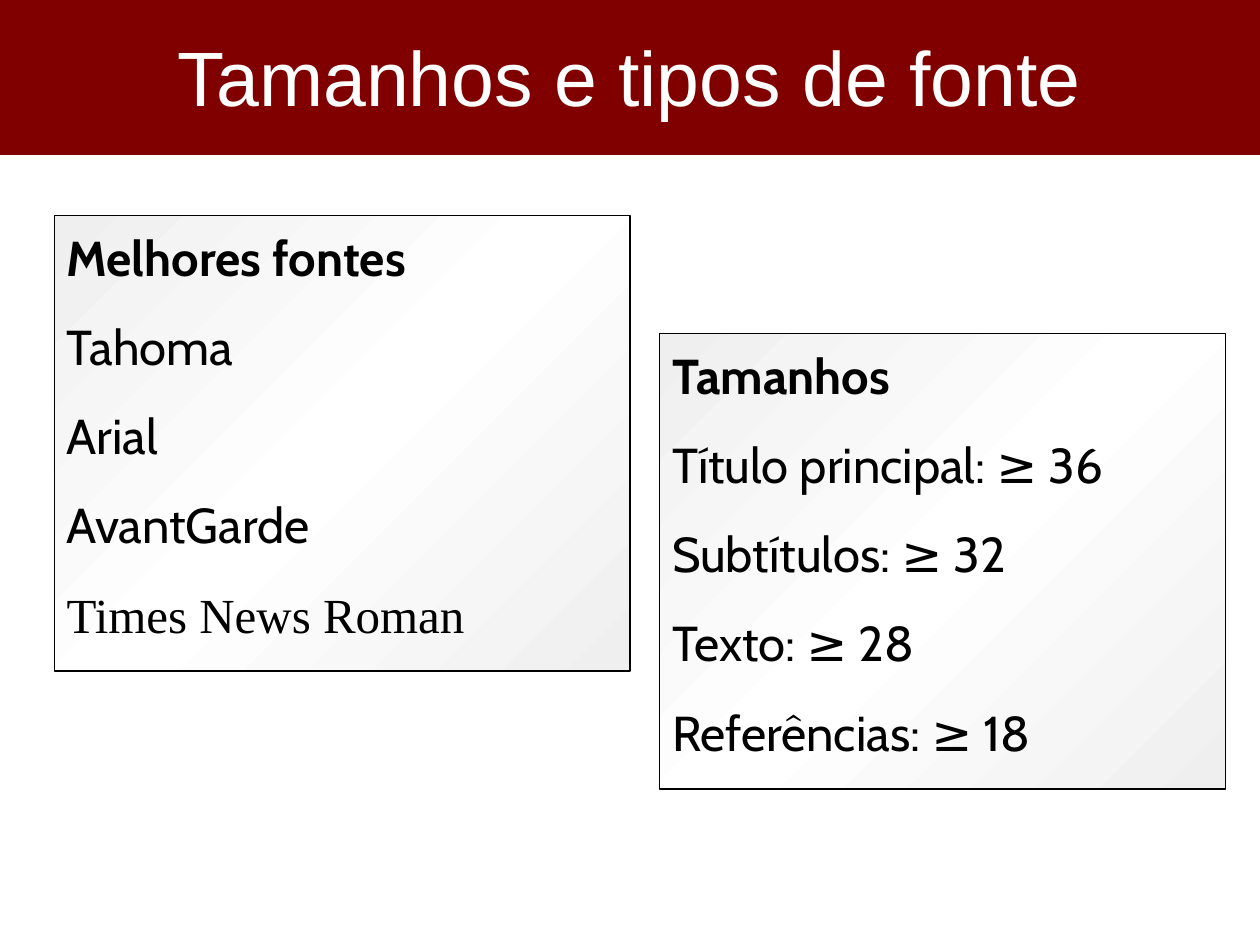
import copy

import pptx
import pptx.dml.color
import pptx.enum.shapes
import pptx.enum.text
import pptx.oxml.ns
import pptx.util
from lxml import etree

Pt = pptx.util.Pt
RGBColor = pptx.dml.color.RGBColor
MAROON = RGBColor(0x80, 0x00, 0x00)
WHITE = RGBColor(0xFF, 0xFF, 0xFF)
PALE_GREY = RGBColor(0xEF, 0xEF, 0xEF)
BLACK = RGBColor(0x00, 0x00, 0x00)

TITLE_FORMAT = {"name": "Arial", "size": Pt(44)}
ENTRY_FORMAT = {"name": "Cabin", "size": Pt(28), "bold": False}
HEADING_FORMAT = ENTRY_FORMAT | {"bold": True}
SERIF_FORMAT = ENTRY_FORMAT | {"name": "Times New Roman"}


def add_box(slide, box):
    """Add a shadowless rectangle with wrapped text in the given box."""
    rectangle = slide.shapes.add_shape(
        pptx.enum.shapes.MSO_SHAPE.RECTANGLE, *(Pt(length) for length in box))
    rectangle.shadow.inherit = False
    rectangle.text_frame.word_wrap = True
    return rectangle


def write(paragraph, text, font_format, color):
    """Put one formatted run into a paragraph."""
    run = paragraph.add_run()
    run.text = text
    run.font.color.rgb = color
    for attribute, value in font_format.items():
        setattr(run.font, attribute, value)


def fill_diagonally(panel):
    """Shade a panel grey, white, grey from top left to bottom right."""
    panel.fill.gradient()
    stop_list = panel._element.spPr.find(".//" + pptx.oxml.ns.qn("a:gsLst"))
    stop_list.append(copy.deepcopy(stop_list[-1]))
    shades = ((0, PALE_GREY), (0.5, WHITE), (1, PALE_GREY))
    for stop, (position, color) in zip(panel.fill.gradient_stops, shades):
        stop.position = position
        stop.color.rgb = color
    panel.fill.gradient_angle = 315


def space_before_half_line(paragraph):
    """Leave half a line above a paragraph."""
    properties = paragraph._p.get_or_add_pPr()
    spacing = etree.SubElement(properties, pptx.oxml.ns.qn("a:spcBef"))
    etree.SubElement(spacing, pptx.oxml.ns.qn("a:spcPct"), val="50000")


def add_title_band(slide, box, title):
    """Draw the coloured band with the centred slide title."""
    band = add_box(slide, box)
    band.fill.solid()
    band.fill.fore_color.rgb = MAROON
    band.line.fill.background()
    band.text_frame.vertical_anchor = pptx.enum.text.MSO_ANCHOR.MIDDLE
    heading = band.text_frame.paragraphs[0]
    heading.alignment = pptx.enum.text.PP_ALIGN.CENTER
    write(heading, title, TITLE_FORMAT, WHITE)


def add_panel(slide, box, entries):
    """Draw a shaded panel with one paragraph for each entry."""
    panel = add_box(slide, box)
    fill_diagonally(panel)
    panel.line.color.rgb = BLACK
    panel.line.width = Pt(0.75)
    frame = panel.text_frame
    frame.vertical_anchor = pptx.enum.text.MSO_ANCHOR.TOP
    frame.auto_size = pptx.enum.text.MSO_AUTO_SIZE.SHAPE_TO_FIT_TEXT
    for index, (text, font_format) in enumerate(entries):
        entry = frame.add_paragraph() if index else frame.paragraphs[0]
        entry.alignment = pptx.enum.text.PP_ALIGN.LEFT
        entry.line_spacing = 1.1
        space_before_half_line(entry)
        write(entry, text, font_format, BLACK)


def main():
    """Build the slide and save it."""
    presentation = pptx.Presentation()
    presentation.slide_width, presentation.slide_height = Pt(720), Pt(540)
    slide = presentation.slides.add_slide(presentation.slide_layouts[6])
    add_panel(slide, (31, 123, 329, 260.5), [
        ("Melhores fontes", HEADING_FORMAT),
        ("Tahoma", ENTRY_FORMAT),
        ("Arial", ENTRY_FORMAT),
        ("AvantGarde", ENTRY_FORMAT),
        ("Times News Roman", SERIF_FORMAT),
    ])
    add_panel(slide, (377, 190.5, 323.5, 260.5), [
        ("Tamanhos", HEADING_FORMAT),
        ("Título principal: ≥ 36", ENTRY_FORMAT),
        ("Subtítulos: ≥ 32", ENTRY_FORMAT),
        ("Texto: ≥ 28", ENTRY_FORMAT),
        ("Referências: ≥ 18", ENTRY_FORMAT),
    ])
    add_title_band(slide, (0, -2, 720, 90.5), "Tamanhos e tipos de fonte")
    presentation.save("out.pptx")


if __name__ == "__main__":
    main()
